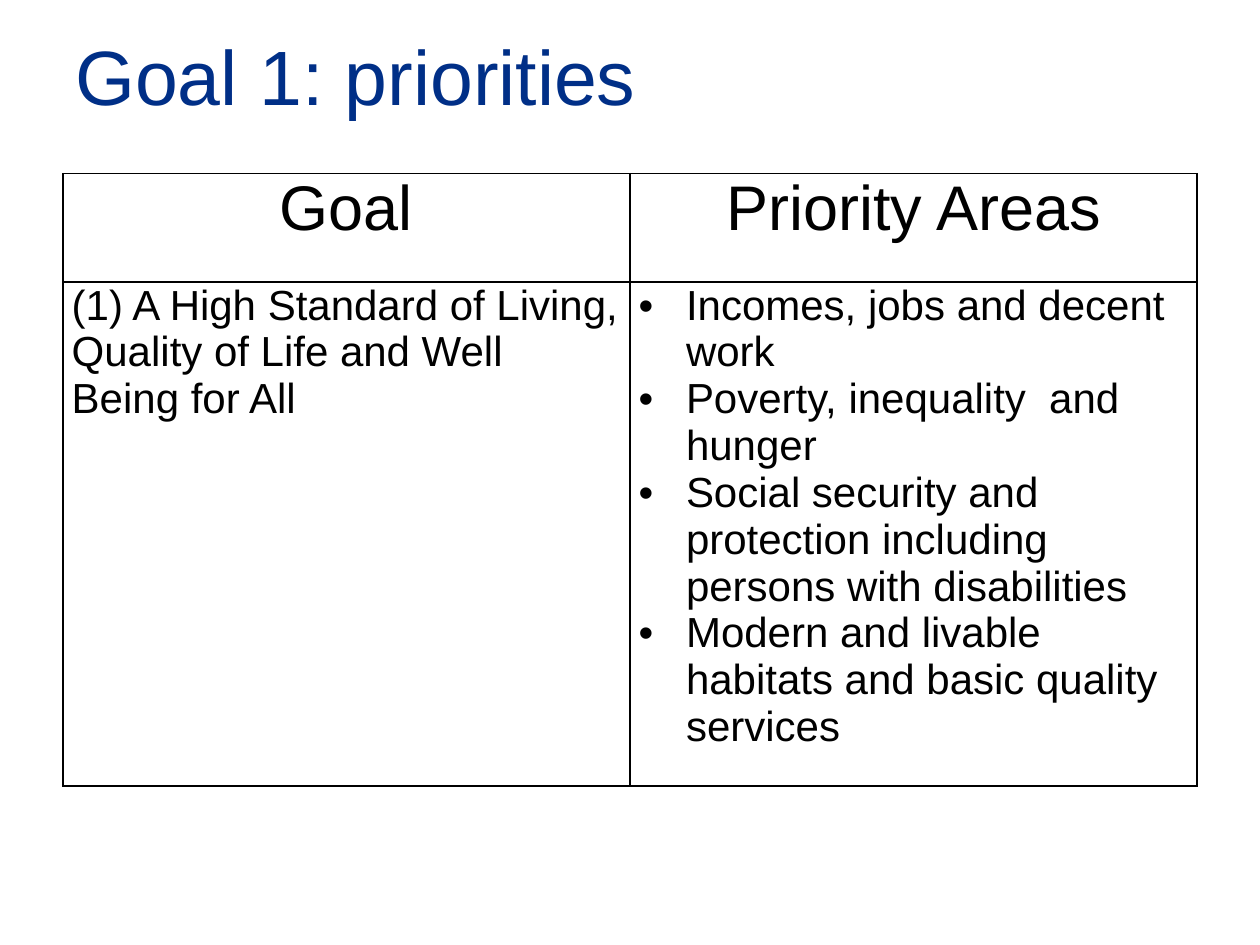
from dataclasses import dataclass

from pptx import Presentation
from pptx.dml.color import RGBColor
from pptx.enum.text import MSO_ANCHOR, PP_ALIGN
from pptx.oxml.ns import qn
from pptx.util import Pt
from lxml.etree import SubElement

NAVY = RGBColor(0x00, 0x2F, 0x87)
BLACK = RGBColor(0x00, 0x00, 0x00)
FONT = "Arial"
MARGIN = Pt(36)
CONTENT_WIDTH = Pt(648)
ROW_HEIGHTS = (Pt(62), Pt(276.5))
BULLET_INDENT = Pt(27)


@dataclass(frozen=True)
class Entry:
    lines: tuple[str, ...]
    size: int = 24
    align: PP_ALIGN = PP_ALIGN.LEFT
    bulleted: bool = False


def heading(text: str) -> Entry:
    return Entry((text,), size=36, align=PP_ALIGN.CENTER)


GOAL_ROWS = (
    (heading("Goal"), heading("Priority Areas")),
    (
        Entry(("(1) A High Standard of Living, Quality of Life and Well Being for All",)),
        Entry(
            (
                "Incomes, jobs and decent work",
                "Poverty, inequality  and hunger",
                "Social security and protection including persons with disabilities",
                "Modern and livable habitats and basic quality services",
            ),
            bulleted=True,
        ),
    ),
)


def style_text(paragraph, size: int, color: RGBColor) -> None:
    for run in paragraph.runs:
        run.font.name = FONT
        run.font.size = Pt(size)
        run.font.color.rgb = color


def add_bullet(paragraph) -> None:
    properties = paragraph._p.get_or_add_pPr()
    properties.set("marL", str(BULLET_INDENT))
    properties.set("indent", str(-BULLET_INDENT))
    SubElement(properties, qn("a:buFont"), typeface=FONT)
    SubElement(properties, qn("a:buChar"), char="•")


def draw_borders(cell) -> None:
    properties = cell._tc.get_or_add_tcPr()
    for position, side in enumerate(("a:lnL", "a:lnR", "a:lnT", "a:lnB")):
        line = properties.makeelement(qn(side), {"w": str(Pt(1))})
        fill = SubElement(line, qn("a:solidFill"))
        SubElement(fill, qn("a:srgbClr"), val=str(BLACK))
        properties.insert(position, line)  # borders come before the fill


def fill_cell(cell, entry: Entry) -> None:
    cell.fill.background()
    cell.margin_left = cell.margin_right = Pt(5)
    cell.margin_top = cell.margin_bottom = Pt(0)
    cell.text_frame.text = "\n".join(entry.lines)
    for paragraph in cell.text_frame.paragraphs:
        paragraph.alignment = entry.align
        style_text(paragraph, entry.size, BLACK)
        if entry.bulleted:
            add_bullet(paragraph)
    draw_borders(cell)


def add_title(slide, text: str) -> None:
    frame = slide.shapes.add_textbox(MARGIN, Pt(0), CONTENT_WIDTH, Pt(85)).text_frame
    frame.word_wrap = True
    frame.vertical_anchor = MSO_ANCHOR.MIDDLE
    frame.text = text
    style_text(frame.paragraphs[0], 44, NAVY)


def add_goal_table(slide) -> None:
    priorities = slide.shapes.add_table(
        len(GOAL_ROWS), len(GOAL_ROWS[0]), MARGIN, Pt(99.25), CONTENT_WIDTH, sum(ROW_HEIGHTS)
    ).table
    priorities.first_row = priorities.horz_banding = False
    for row, height, entries in zip(priorities.rows, ROW_HEIGHTS, GOAL_ROWS):
        row.height = height
        for cell, entry in zip(row.cells, entries):
            fill_cell(cell, entry)


def main() -> None:
    deck = Presentation()
    deck.slide_width, deck.slide_height = Pt(720), Pt(540)
    slide = deck.slides.add_slide(deck.slide_layouts[6])

    # Title
    add_title(slide, "Goal 1: priorities")

    # Goal and its priority areas
    add_goal_table(slide)

    deck.save("out.pptx")


if __name__ == "__main__":
    main()
